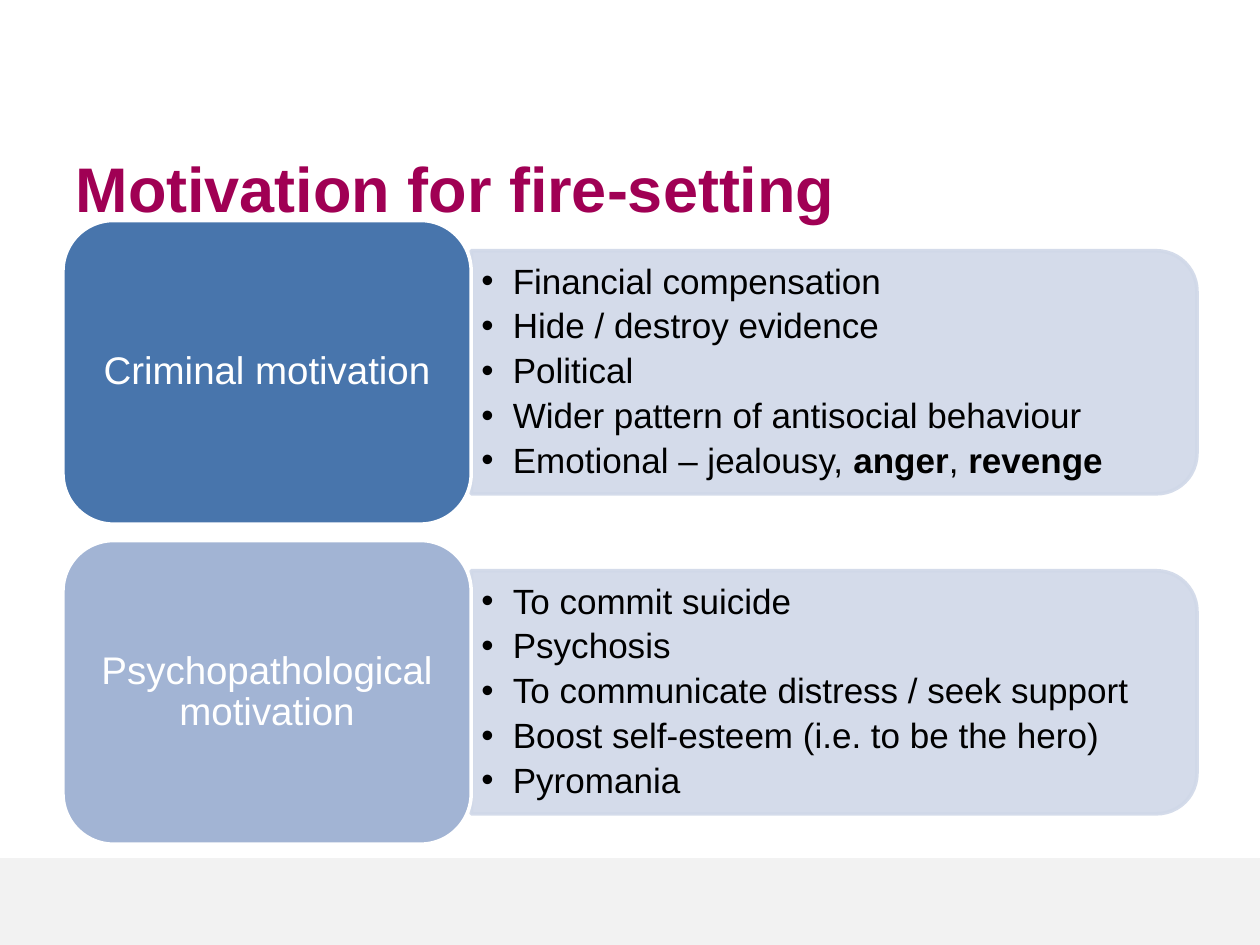
from lxml.etree import SubElement
from pptx import Presentation
from pptx.dml.color import RGBColor
from pptx.enum.shapes import MSO_SHAPE
from pptx.enum.text import MSO_ANCHOR, MSO_AUTO_SIZE, PP_ALIGN
from pptx.oxml.ns import qn
from pptx.util import Inches, Pt

# Content: each row is a label, its colour and its points; a point is a list of (text, bold)
TITLE = "Motivation for fire-setting"
ROWS = [
    ("Criminal motivation", "criminal", [
        [("Financial compensation", False)],
        [("Hide / destroy evidence", False)],
        [("Political", False)],
        [("Wider pattern of antisocial behaviour", False)],
        [("Emotional – jealousy, ", False), ("anger", True),
         (", ", False), ("revenge", True)],
    ]),
    ("Psychopathological motivation", "psychopathological", [
        [("To commit suicide", False)],
        [("Psychosis", False)],
        [("To communicate distress / seek support", False)],
        [("Boost self-esteem (i.e. to be the hero)", False)],
        [("Pyromania", False)],
    ]),
]

THEME = {
    "font": "Arial",
    "color": {"title": "A00054", "criminal": "4875AC", "psychopathological": "A2B4D4",
              "panel": "D0D8E8", "band": "F2F2F2", "white": "FFFFFF", "text": "000000"},
    "size": {"title": 36, "label": 22, "point": 20},
}

# Layout, in inches
LEFT, TOP = 0.5, 1.75
LABEL_WIDTH, LABEL_HEIGHT, ROW_STEP = 3.24, 2.41, 2.54
PANEL_WIDTH, PANEL_HEIGHT = 5.76, 1.93
LIST_WIDTH, LIST_HEIGHT = 5.67, 1.74


def color(name):
    return RGBColor.from_string(THEME["color"][name])


def apply(target, values):
    for name, value in values.items():
        setattr(target, name, value)


def place(shape, left, top, width, height):
    apply(shape, {"left": Inches(left), "top": Inches(top),
                  "width": Inches(width), "height": Inches(height)})


def format_frame(frame, side, edge):
    apply(frame, {"word_wrap": True, "auto_size": MSO_AUTO_SIZE.NONE,
                  "vertical_anchor": MSO_ANCHOR.MIDDLE,
                  "margin_left": Inches(side), "margin_right": Inches(side),
                  "margin_top": Inches(edge), "margin_bottom": Inches(edge)})


def add_span(para, text, size, tint, bold=False):
    span = para.add_run()
    span.text = text
    apply(span.font, {"name": THEME["font"], "size": Pt(THEME["size"][size]), "bold": bold})
    span.font.color.rgb = color(tint)


def add_block(page, kind, bounds, fill, line=None):
    block = page.shapes.add_shape(kind, *(Inches(value) for value in bounds))
    block.shadow.inherit = False
    block.fill.solid()
    block.fill.fore_color.rgb = color(fill)
    if line:
        block.line.color.rgb = color(line)
        block.line.width = Pt(2)
    else:
        block.line.fill.background()
    return block


def add_panel(page, left, middle):
    """Panel rounded on its right side: a top-rounded rectangle turned a quarter."""
    bounds = (left + (PANEL_WIDTH - PANEL_HEIGHT) / 2, middle - PANEL_WIDTH / 2,
              PANEL_HEIGHT, PANEL_WIDTH)
    panel = add_block(page, MSO_SHAPE.ROUND_2_SAME_RECTANGLE, bounds, "panel", "panel")
    panel.rotation = 90
    for tint in panel._element.spPr.iter(qn("a:srgbClr")):
        SubElement(tint, qn("a:alpha"), val="90000")


def fill_list(page, box, points, left, middle):
    place(box, left, middle - LIST_HEIGHT / 2, LIST_WIDTH, LIST_HEIGHT)
    page.shapes._spTree.append(box._element)  # bring the list in front of its panel
    frame = box.text_frame
    format_frame(frame, 0.08, 0.04)
    for index, point in enumerate(points):
        para = frame.add_paragraph() if index else frame.paragraphs[0]
        properties = para._p.get_or_add_pPr()
        properties.set("marL", str(Inches(0.25)))
        properties.set("indent", str(Inches(-0.25)))
        SubElement(properties, qn("a:buChar"), char="•")
        apply(para, {"line_spacing": 0.9, "space_before": Pt(0), "space_after": Pt(4)})
        for text, bold in point:
            add_span(para, text, "point", "text", bold)


def add_label(page, text, fill, top):
    label = add_block(page, MSO_SHAPE.ROUNDED_RECTANGLE,
                      (LEFT, top, LABEL_WIDTH, LABEL_HEIGHT), fill, "white")
    format_frame(label.text_frame, 0.09, 0.05)
    para = label.text_frame.paragraphs[0]
    apply(para, {"alignment": PP_ALIGN.CENTER, "line_spacing": 0.9})
    add_span(para, text, "label", "white")


def main():
    deck = Presentation()
    apply(deck, {"slide_width": Inches(10), "slide_height": Inches(7.5)})
    page = deck.slides.add_slide(deck.slide_layouts.get_by_name("Two Content"))
    title, *lists = page.placeholders

    # Footer band and title
    add_block(page, MSO_SHAPE.RECTANGLE, (0, 6.81, 10, 0.69), "band")
    place(title, 0.5, 1.12, 8.5, 0.74)
    format_frame(title.text_frame, 0.1, 0.05)
    heading = title.text_frame.paragraphs[0]
    heading.alignment = PP_ALIGN.LEFT
    add_span(heading, TITLE, "title", "title", True)

    # One label with its panel of points per row
    panel_left = LEFT + LABEL_WIDTH
    for index, ((text, fill, points), box) in enumerate(zip(ROWS, lists)):
        top = TOP + index * ROW_STEP
        middle = top + LABEL_HEIGHT / 2
        add_panel(page, panel_left, middle)
        fill_list(page, box, points, panel_left, middle)
        add_label(page, text, fill, top)

    deck.save("out.pptx")


if __name__ == "__main__":
    main()
